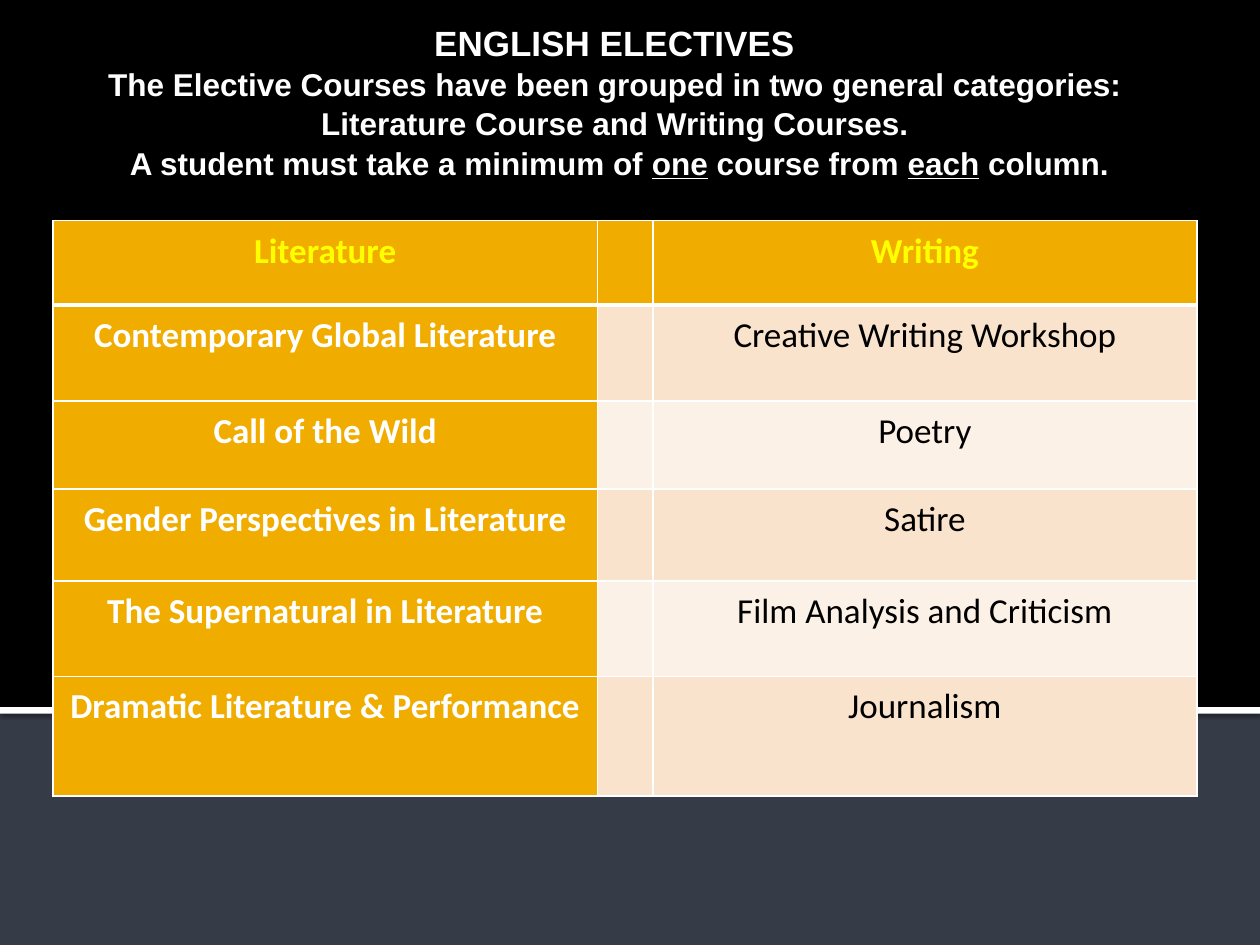
from lxml import etree
from pptx import Presentation
from pptx.dml.color import RGBColor
from pptx.enum import shapes, text
from pptx.oxml import parse_xml
from pptx.oxml.ns import nsdecls
from pptx.util import Cm, Pt

BLACK = RGBColor(0x00, 0x00, 0x00)
WHITE = RGBColor(0xFF, 0xFF, 0xFF)
YELLOW = RGBColor(0xFF, 0xFF, 0x00)
SLATE = RGBColor(0x35, 0x3B, 0x47)
AMBER = RGBColor(0xF0, 0xAD, 0x00)
PEACH = RGBColor(0xF9, 0xE3, 0xCC)
CREAM = RGBColor(0xFC, 0xF1, 0xE7)

SLIDE_WIDTH, SLIDE_HEIGHT = Cm(25.4), Cm(19.05)
COLUMN_WIDTHS = [10.97, 1.12, 10.97]
ROW_HEIGHTS = [1.7, 1.93, 1.78, 1.85, 1.93, 2.41]
COURSES = [
    ("Literature", "Writing"),
    ("Contemporary Global Literature", "Creative Writing Workshop"),
    ("Call of the Wild", "Poetry"),
    ("Gender Perspectives in Literature", "Satire"),
    ("The Supernatural in Literature", "Film Analysis and Criticism"),
    ("Dramatic Literature & Performance", "Journalism"),
]


def add_text(paragraph, words, *, size, color, font="Calibri", bold=False, underline=False):
    paragraph.alignment = text.PP_ALIGN.CENTER
    run = paragraph.add_run()
    run.text = words
    run.font.name = font
    run.font.size = Pt(size)
    run.font.bold = bold
    run.font.underline = underline
    run.font.color.rgb = color


def add_band(slide, left, top, width, height, color):
    band = slide.shapes.add_shape(shapes.MSO_SHAPE.RECTANGLE, left, top, width, height)
    band.shadow.inherit = False
    band.fill.solid()
    band.fill.fore_color.rgb = color
    band.line.fill.background()
    return band


def add_backdrop(slide, left, top, width, height):
    """Black upper three quarters, closed by a white rule with a soft shadow."""
    slide.background.fill.solid()
    slide.background.fill.fore_color.rgb = SLATE
    black_height = int(height * 0.75)
    add_band(slide, left, top, width, black_height, BLACK)
    rule = add_band(slide, left, top + black_height - Cm(0.03), width, Cm(0.13), WHITE)
    effects = rule._element.spPr.find("{*}effectLst")
    effects.append(parse_xml(
        f'<a:outerShdw {nsdecls("a")} blurRad="{Pt(2.5)}" dist="{Pt(0.8)}" dir="5400000">'
        '<a:srgbClr val="000000"><a:alpha val="60000"/></a:srgbClr></a:outerShdw>'))


def fill_title(slide, left, top, width, height):
    title = slide.shapes.title
    slide.shapes._spTree.append(title._element)  # in front of the backdrop
    title.left, title.top, title.width, title.height = left, top, width, height
    frame = title.text_frame
    frame.auto_size = text.MSO_AUTO_SIZE.NONE
    frame.vertical_anchor = text.MSO_ANCHOR.TOP
    frame.margin_top = Cm(0.2)
    lines = [
        ["ENGLISH ELECTIVES "],
        ["The Elective Courses have been grouped in two general categories: "],
        ["Literature Course and Writing Courses. "],
        ["A student must take a minimum of ", "one", " course from ", "each", " column."],
    ]
    for number, line in enumerate(lines):
        paragraph = frame.add_paragraph() if number else frame.paragraphs[0]
        paragraph.line_spacing = 1.04
        for position, words in enumerate(line):
            add_text(paragraph, words, size=18 if number else 20, color=WHITE,
                     font="Arial", bold=True, underline=position % 2 == 1)


def set_borders(cell, top, bottom):
    """White borders; top and bottom widths in points, sides 1 point."""
    properties = cell._tc.get_or_add_tcPr()
    widths = {"lnL": 1, "lnR": 1, "lnT": top, "lnB": bottom}
    for index, (side, width) in enumerate(widths.items()):
        border = parse_xml(f'<a:{side} {nsdecls("a")} w="{Pt(width)}"><a:solidFill/></a:{side}>')
        etree.SubElement(border[0], border.tag.replace(side, "srgbClr"), val=str(WHITE))
        properties.insert(index, border)


def add_course_table(slide, left, top):
    table = slide.shapes.add_table(
        len(ROW_HEIGHTS), len(COLUMN_WIDTHS), left, top,
        Cm(sum(COLUMN_WIDTHS)), Cm(sum(ROW_HEIGHTS))).table
    for column, width in zip(table.columns, COLUMN_WIDTHS):
        column.width = Cm(width)
    for number, (literature, writing) in enumerate(COURSES):
        table.rows[number].height = Cm(ROW_HEIGHTS[number])
        header = number == 0
        for position, words in enumerate((literature, "", writing)):
            cell = table.cell(number, position)
            accent = header or position == 0
            cell.fill.solid()
            cell.fill.fore_color.rgb = AMBER if accent else PEACH if number % 2 else CREAM
            set_borders(cell, top=3 if number == 1 else 1, bottom=3 if header else 1)
            if words:
                cell.margin_left = cell.margin_right = Cm(0.18)
                cell.margin_top = cell.margin_bottom = Cm(0.18)
                color = YELLOW if header else WHITE if accent else BLACK
                add_text(cell.text_frame.paragraphs[0], words,
                         size=20, color=color, bold=accent)


def main():
    presentation = Presentation()
    presentation.slide_width, presentation.slide_height = SLIDE_WIDTH, SLIDE_HEIGHT
    slide = presentation.slides.add_slide(presentation.slide_layouts[5])
    add_backdrop(slide, 0, 0, SLIDE_WIDTH, SLIDE_HEIGHT)
    fill_title(slide, Cm(-0.43), Cm(0.2), Cm(25.83), Cm(4.19))
    add_course_table(slide, Cm(1.07), Cm(4.45))
    presentation.save("out.pptx")


if __name__ == "__main__":
    main()
